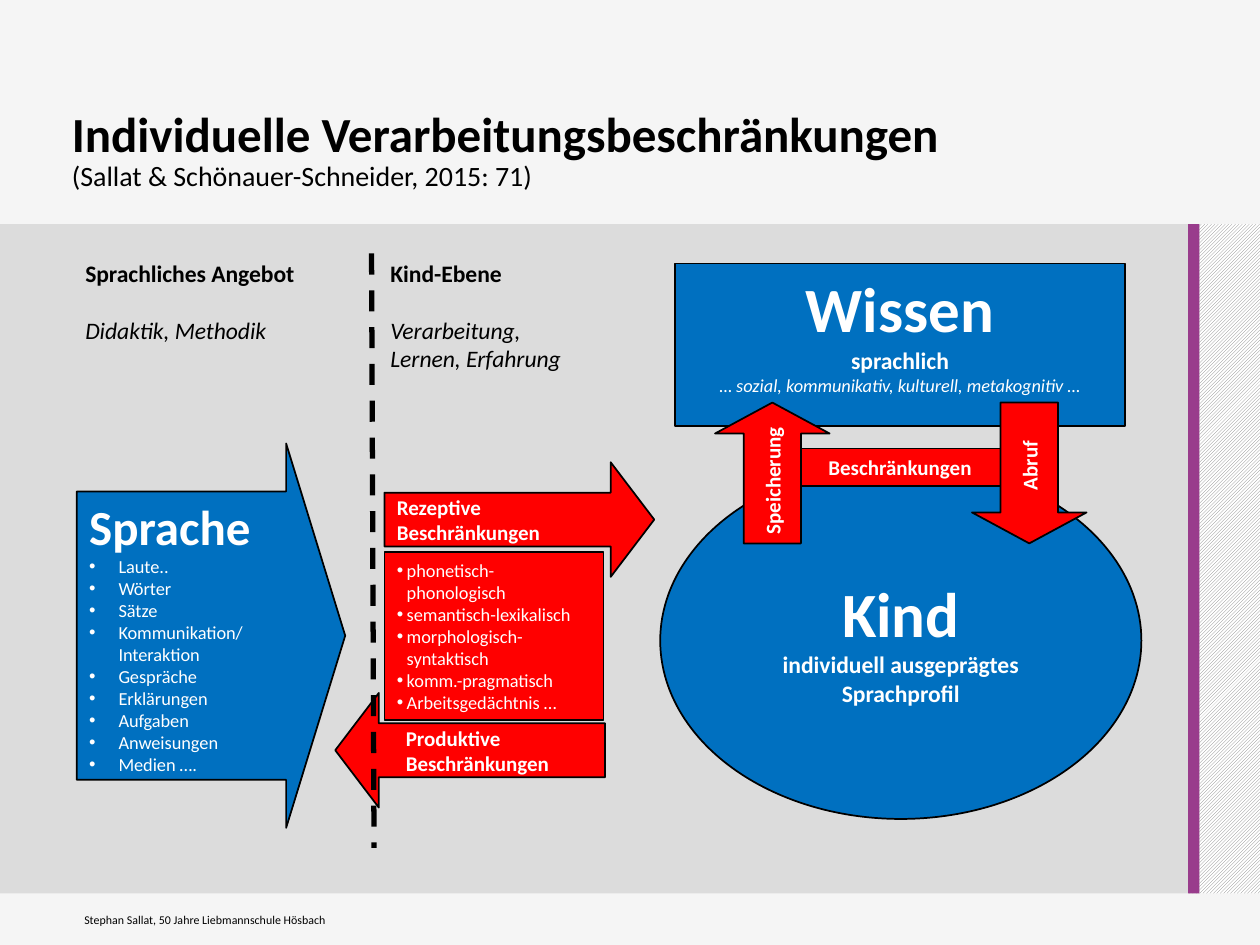
from lxml import etree
from pptx import Presentation
from pptx.dml.color import RGBColor
from pptx.enum.dml import MSO_LINE, MSO_PATTERN
from pptx.enum.shapes import MSO_CONNECTOR, MSO_SHAPE
from pptx.enum.text import MSO_ANCHOR, PP_ALIGN
from pptx.oxml.ns import qn
from pptx.util import Cm, Pt

RECTANGLE = MSO_SHAPE.RECTANGLE
ELLIPSE = MSO_SHAPE.OVAL
ARROW = MSO_SHAPE.RIGHT_ARROW
STRAIGHT = MSO_CONNECTOR.STRAIGHT
DASH = MSO_LINE.DASH
HATCH = MSO_PATTERN.LIGHT_UPWARD_DIAGONAL
TOP, MIDDLE, BOTTOM = MSO_ANCHOR.TOP, MSO_ANCHOR.MIDDLE, MSO_ANCHOR.BOTTOM
LEFT, CENTER = PP_ALIGN.LEFT, PP_ALIGN.CENTER
TITLE_ONLY = 5

BLUE, RED, BLACK, WHITE = "0070C0", "FF0000", "000000", "FFFFFF"
PALE, GREY, PURPLE, HATCH_GREY = "F5F5F5", "DCDCDC", "993C8C", "808080"
LABEL = {"size": Pt(12), "bold": True}
HEADING = {"size": Pt(36), "bold": True}
SUBHEADING = {"size": Pt(13.5), "bold": True}
ITALIC = {"size": Pt(13.5), "italic": True}
SMALL = {"size": Pt(10.5)}
SIDE_ARROW = (0.47, 0.38)
UPRIGHT_ARROW = (0.5, 0.27)


def color(value):
    return RGBColor.from_string(value)


class SlideBuilder:
    font_name = "Calibri"

    def __init__(self, presentation):
        self.slide = presentation.slides.add_slide(presentation.slide_layouts[TITLE_ONLY])
        fill = self.slide.background.fill
        fill.solid()
        fill.fore_color.rgb = color(PALE)

    def format_font(self, font, font_color, values):
        font.name = self.font_name
        font.color.rgb = color(font_color)
        for name, value in values.items():
            setattr(font, name, value)

    def format_frame(self, frame, anchor, side_inset=0.25):
        values = {"word_wrap": True, "vertical_anchor": anchor,
                  "margin_left": Cm(side_inset), "margin_right": Cm(side_inset),
                  "margin_top": Cm(0.13), "margin_bottom": Cm(0.13)}
        for name, value in values.items():
            setattr(frame, name, value)

    def add_lines(self, frame, lines, font_color, alignment=LEFT, bullet_indent=0,
                  left_indent=0, gap=0):
        for index, (text, values) in enumerate(lines):
            paragraph = frame.paragraphs[0] if index == 0 else frame.add_paragraph()
            paragraph.alignment = alignment
            if left_indent:
                paragraph._p.get_or_add_pPr().set("marL", str(Cm(left_indent)))
            if bullet_indent and values == SMALL:
                self.add_bullet(paragraph, bullet_indent)
            if index and gap:
                paragraph.space_before = Pt(gap)
            run = paragraph.add_run()
            run.text = text
            self.format_font(run.font, font_color, values)

    def add_bullet(self, paragraph, indent):
        properties = paragraph._p.get_or_add_pPr()
        properties.set("marL", str(Cm(indent)))
        properties.set("indent", str(-Cm(indent)))
        etree.SubElement(properties, qn("a:buFont")).set("typeface", "Arial")
        etree.SubElement(properties, qn("a:buChar")).set("char", "•")

    def add_box(self, kind, place, fill_color, lines=(), line_width=1, anchor=MIDDLE,
                side_inset=0.25, adjustments=(), rotation=0, flipped=False, **text_format):
        shape = self.slide.shapes.add_shape(kind, *map(Cm, place))
        shape.shadow.inherit = False
        shape.fill.solid()
        shape.fill.fore_color.rgb = color(fill_color)
        if line_width:
            shape.line.color.rgb = color(BLACK)
            shape.line.width = Pt(line_width)
        else:
            shape.line.fill.background()
        for index, value in enumerate(adjustments):
            shape.adjustments[index] = value
        shape.rotation = rotation
        if flipped:
            shape._element.spPr.find(qn("a:xfrm")).set("flipH", "1")
        self.format_frame(shape.text_frame, anchor, side_inset)
        self.add_lines(shape.text_frame, lines, WHITE, **text_format)
        return shape

    def add_hatched_panel(self, place):
        fill = self.add_box(RECTANGLE, place, WHITE, line_width=0).fill
        fill.patterned()
        fill.pattern = HATCH
        fill.fore_color.rgb = color(HATCH_GREY)
        fill.back_color.rgb = color(WHITE)

    def add_text(self, place, lines, anchor=TOP, gap=0):
        frame = self.slide.shapes.add_textbox(*map(Cm, place)).text_frame
        self.format_frame(frame, anchor)
        self.add_lines(frame, lines, BLACK, gap=gap)

    def add_divider(self, start, end):
        connector = self.slide.shapes.add_connector(STRAIGHT, *map(Cm, start + end))
        connector.line.color.rgb = color(BLACK)
        connector.line.width = Pt(3)
        connector.line.dash_style = DASH
        etree.SubElement(connector._element.spPr, qn("a:effectLst"))

    def set_title(self, place, heading, source):
        title = self.slide.shapes.title
        title.left, title.top, title.width, title.height = map(Cm, place)
        self.format_frame(title.text_frame, BOTTOM, 0)
        self.add_lines(title.text_frame, [(heading, {"size": Pt(28), "bold": True})], BLACK)
        paragraph = title.text_frame.paragraphs[0]
        paragraph.line_spacing = 0.9
        paragraph.add_line_break()
        run = paragraph.add_run()
        run.text = source
        self.format_font(run.font, BLACK, {"size": Pt(16), "bold": False})


def main():
    presentation = Presentation()
    presentation.slide_width, presentation.slide_height = Cm(25.4), Cm(19.05)
    builder = SlideBuilder(presentation)

    builder.set_title((1.45, 1.02, 20.85, 3), "Individuelle Verarbeitungsbeschränkungen",
                      "(Sallat & Schönauer-Schneider, 2015: 71)")
    builder.add_hatched_panel((23.95, 4.52, 1.45, 13.49))
    builder.add_box(RECTANGLE, (0, 4.52, 24.18, 13.49), GREY, line_width=0)
    builder.add_box(RECTANGLE, (23.95, 4.52, 0.23, 13.49), PURPLE, line_width=0)

    builder.add_box(ELLIPSE, (13.31, 9.32, 9.7, 7.19), BLUE,
                    [("Kind", HEADING), ("individuell ausgeprägtes", SUBHEADING),
                     ("Sprachprofil", SUBHEADING)], side_inset=0, alignment=CENTER)
    builder.add_box(RECTANGLE, (16, 9.04, 4.29, 0.76), RED, [("Beschränkungen", LABEL)],
                    line_width=0.75, alignment=CENTER)
    builder.add_box(RECTANGLE, (13.61, 5.31, 9.07, 3.28), BLUE,
                    [("Wissen", HEADING), ("sprachlich", SUBHEADING),
                     ("… sozial, kommunikativ, kulturell, metakognitiv …",
                      {"size": Pt(10.5), "italic": True})],
                    line_width=0.75, anchor=TOP, alignment=CENTER)

    offers = ("Laute..", "Wörter", "Sätze", "Kommunikation/ Interaktion", "Gespräche",
              "Erklärungen", "Aufgaben", "Anweisungen", "Medien ….")
    builder.add_box(ARROW, (1.55, 8.94, 5.41, 7.75), BLUE,
                    [("Sprache", {"size": Pt(28), "bold": True})]
                    + [(offer, SMALL) for offer in offers],
                    adjustments=(0.75, 0.22), bullet_indent=0.59)
    builder.add_box(ARROW, (7.75, 9.32, 5.44, 2.31), RED,
                    [("Rezeptive Beschränkungen", LABEL)], adjustments=SIDE_ARROW)
    for left, label, flipped in ((14.15, "Speicherung", False), (19.33, "Abruf", True)):
        builder.add_box(ARROW, (left, 8.38, 2.84, 2.31), RED, [(label, LABEL)],
                        side_inset=0, adjustments=UPRIGHT_ARROW, rotation=270,
                        flipped=flipped, alignment=CENTER)

    limits = ("phonetisch-phonologisch", "semantisch-lexikalisch",
              "morphologisch-syntaktisch", "komm.-pragmatisch", "Arbeitsgedächtnis …")
    builder.add_box(RECTANGLE, (7.75, 11.13, 4.42, 3.38), RED,
                    [(limit, SMALL) for limit in limits], bullet_indent=0.2)
    builder.add_box(ARROW, (6.76, 13.97, 5.44, 2.31), RED,
                    [("Produktive Beschränkungen", LABEL)], adjustments=SIDE_ARROW,
                    flipped=True, left_indent=0.76)

    builder.add_divider((7.49, 5.11), (7.54, 17.09))
    builder.add_text((1.47, 5.08, 5.46, 1.98),
                     [("Sprachliches Angebot", SUBHEADING), ("Didaktik, Methodik", ITALIC)],
                     gap=16.5)
    builder.add_text((7.62, 5.08, 4.55, 2.57),
                     [("Kind-Ebene", SUBHEADING),
                      ("Verarbeitung, Lernen, Erfahrung", ITALIC)], gap=16.5)
    builder.add_text((1.45, 18.03, 11.25, 1.02),
                     [("Stephan Sallat, 50 Jahre Liebmannschule Hösbach", {"size": Pt(6.8)})],
                     anchor=MIDDLE)
    presentation.save("out.pptx")


if __name__ == "__main__":
    main()
